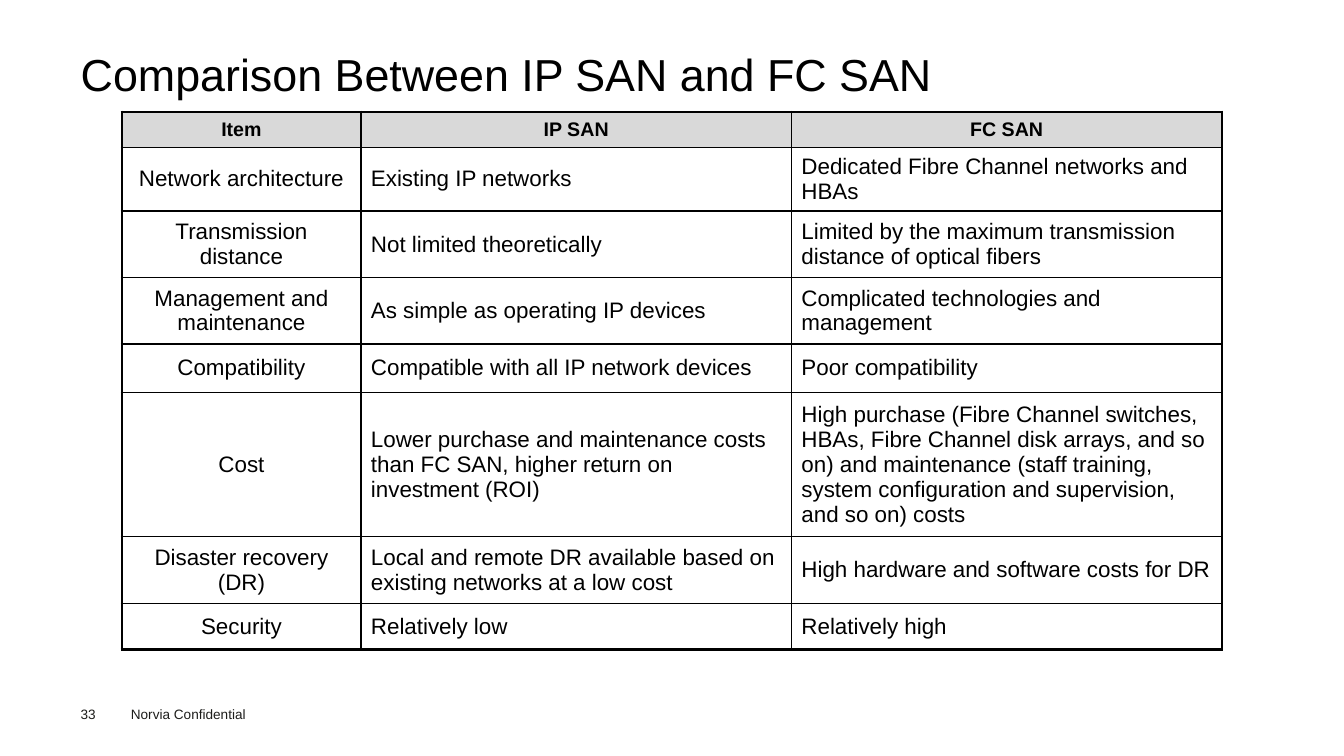
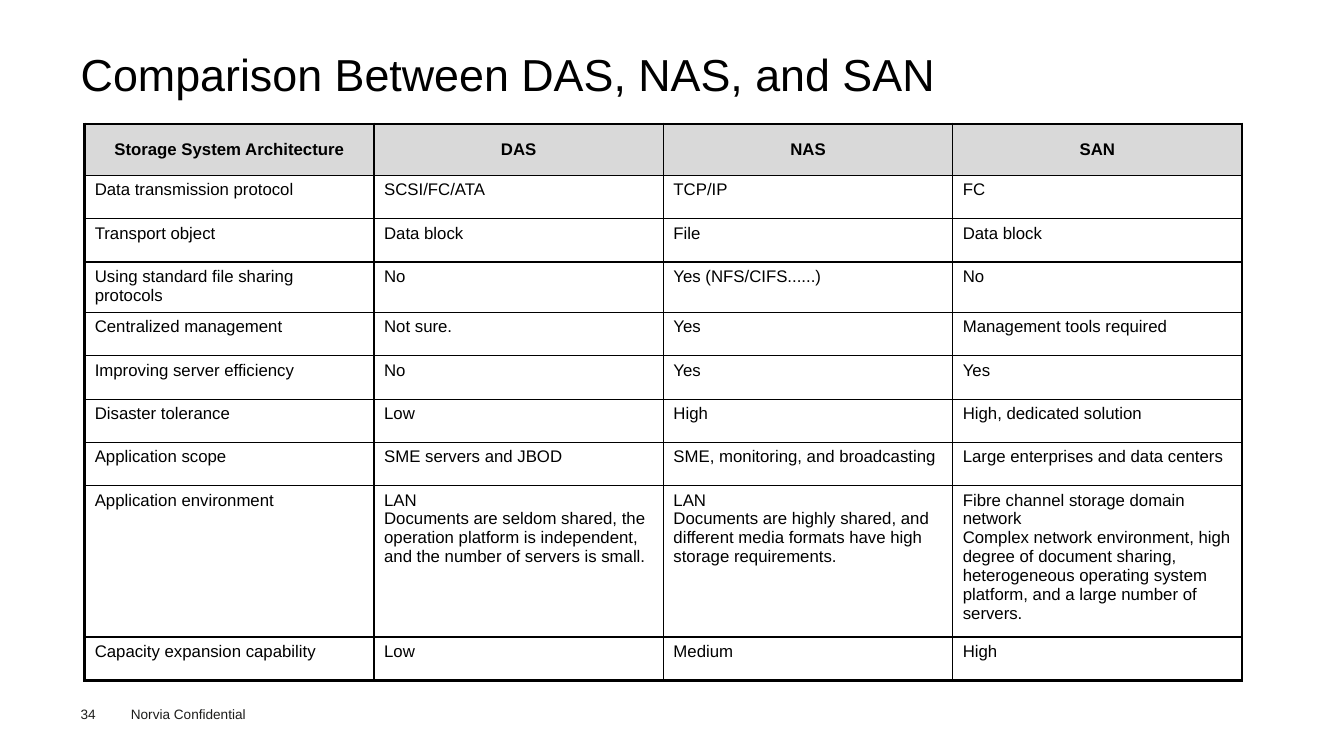
from lxml import etree
from pptx import Presentation
from pptx.dml.color import RGBColor
from pptx.enum.text import MSO_ANCHOR as Anchor, PP_ALIGN as Align
from pptx.oxml.ns import qn
from pptx.util import Inches, Pt

COLORS = {"text": "000000", "footer": "1D1D1B", "header": "D9D9D9", "body": "FFFFFF", "border": "000000"}
FONT = "Arial"
OUTER, INNER = 2.25, 1
TITLE_ONLY = 5

SAN_ROWS = [
    ("Item", "IP SAN", "FC SAN"),
    ("Network architecture", "Existing IP networks", "Dedicated Fibre Channel networks and HBAs"),
    ("Transmission distance", "Not limited theoretically",
     "Limited by the maximum transmission distance of optical fibers"),
    ("Management and maintenance", "As simple as operating IP devices",
     "Complicated technologies and management"),
    ("Compatibility", "Compatible with all IP network devices", "Poor compatibility"),
    ("Cost", "Lower purchase and maintenance costs than FC SAN, higher return on investment (ROI)",
     "High purchase (Fibre Channel switches, HBAs, Fibre Channel disk arrays, and so on) and "
     "maintenance (staff training, system configuration and supervision, and so on) costs"),
    ("Disaster recovery (DR)", "Local and remote DR available based on existing networks at a low cost",
     "High hardware and software costs for DR"),
    ("Security", "Relatively low", "Relatively high"),
]

STORAGE_ROWS = [
    ("Storage System Architecture", "DAS", "NAS", "SAN"),
    ("Data transmission protocol", "SCSI/FC/ATA", "TCP/IP", "FC"),
    ("Transport object", "Data block", "File", "Data block"),
    ("Using standard file sharing protocols", "No", "Yes (NFS/CIFS......)", "No"),
    ("Centralized management", "Not sure.", "Yes", "Management tools required"),
    ("Improving server efficiency", "No", "Yes", "Yes"),
    ("Disaster tolerance", "Low", "High", "High, dedicated solution"),
    ("Application scope", "SME servers and JBOD", "SME, monitoring, and broadcasting",
     "Large enterprises and data centers"),
    ("Application environment",
     "LAN\nDocuments are seldom shared, the operation platform is independent, "
     "and the number of servers is small.",
     "LAN\nDocuments are highly shared, and different media formats have high storage requirements.",
     "Fibre channel storage domain network\nComplex network environment, high degree of document "
     "sharing, heterogeneous operating system platform, and a large number of servers."),
    ("Capacity expansion capability", "Low", "Medium", "High"),
]


def set_borders(cell, widths):
    """Draw the four cell borders; widths are points for left, right, top, bottom."""
    properties = cell._tc.get_or_add_tcPr()
    for index, (side, width) in enumerate(zip("LRTB", widths)):
        line = etree.Element(qn(f"a:ln{side}"), w=str(Pt(width)))
        fill = etree.SubElement(line, qn("a:solidFill"))
        etree.SubElement(fill, qn("a:srgbClr"), val=COLORS["border"])
        properties.insert(index, line)


class ComparisonDeck:
    def __init__(self):
        self.deck = Presentation()
        self.deck.slide_width, self.deck.slide_height = Inches(13.33), Inches(7.5)
        self.page = None

    def style(self, frame, size, color="text", bold=False, align=Align.LEFT):
        for para in frame.paragraphs:
            para.alignment = align
            for span in para.runs:
                font = span.font
                font.name, font.size, font.bold = FONT, Pt(size), bold
                font.color.rgb = RGBColor.from_string(COLORS[color])

    def clear_margins(self, frame):
        frame.margin_left = frame.margin_right = frame.margin_top = frame.margin_bottom = 0

    def add_page(self, title, number):
        self.page = self.deck.slides.add_slide(self.deck.slide_layouts[TITLE_ONLY])
        box = self.page.shapes.title
        box.left, box.top, box.width, box.height = (Inches(v) for v in (0.8, 0.49, 11.73, 0.54))
        frame = box.text_frame
        frame.text = title
        frame.vertical_anchor = Anchor.MIDDLE
        self.clear_margins(frame)
        frame.paragraphs[0].line_spacing = 0.9
        self.style(frame, 32)
        self.add_footer("Norvia Confidential", 1.2, 6.95, 1.6, 0.27)
        self.clear_margins(self.add_footer(str(number), 0.8, 7, 0.55, 0.16))

    def add_footer(self, text, *place):
        frame = self.page.shapes.add_textbox(*(Inches(v) for v in place)).text_frame
        frame.word_wrap = True
        frame.text = text
        self.style(frame, 9.7, "footer")
        return frame

    def add_table(self, rows, left, top, widths, heights, header_size, body_size, centered=False):
        """Add a framed table; centered applies to the row labels and vertical anchor."""
        table = self.page.shapes.add_table(
            len(rows), len(widths), Inches(left), Inches(top),
            Inches(sum(widths)), Inches(sum(heights))).table
        table.first_row = table.horz_banding = False
        for column, width in zip(table.columns, widths):
            column.width = Inches(width)
        last_row, last_column = len(rows) - 1, len(widths) - 1
        for r, (texts, height) in enumerate(zip(rows, heights)):
            table.rows[r].height = Inches(height)
            header = r == 0
            for c, text in enumerate(texts):
                cell = table.cell(r, c)
                cell.text_frame.text = text
                cell.vertical_anchor = Anchor.MIDDLE if header or centered else Anchor.TOP
                cell.fill.solid()
                cell.fill.fore_color.rgb = RGBColor.from_string(COLORS["header" if header else "body"])
                middle = header or (centered and c == 0)
                self.style(cell.text_frame, header_size if header else body_size, bold=header,
                           align=Align.CENTER if middle else Align.LEFT)
                edges = (c == 0, c == last_column, r == 0, r == last_row)
                set_borders(cell, [OUTER if edge else INNER for edge in edges])


def main():
    slides = ComparisonDeck()
    slides.add_page("Comparison Between IP SAN and FC SAN", 33)
    slides.add_table(SAN_ROWS, 1.21, 1.11, [2.37, 4.27, 4.27],
                     [0.35, 0.62, 0.66, 0.66, 0.48, 1.4, 0.66, 0.46], 14, 16, centered=True)
    slides.add_page("Comparison Between DAS, NAS, and SAN", 34)
    slides.add_table(STORAGE_ROWS, 0.84, 1.23, [2.87] * 4,
                     [0.51] + [0.43] * 7 + [1.41, 0.43], 12, 12)
    slides.deck.save("out.pptx")


if __name__ == "__main__":
    main()
